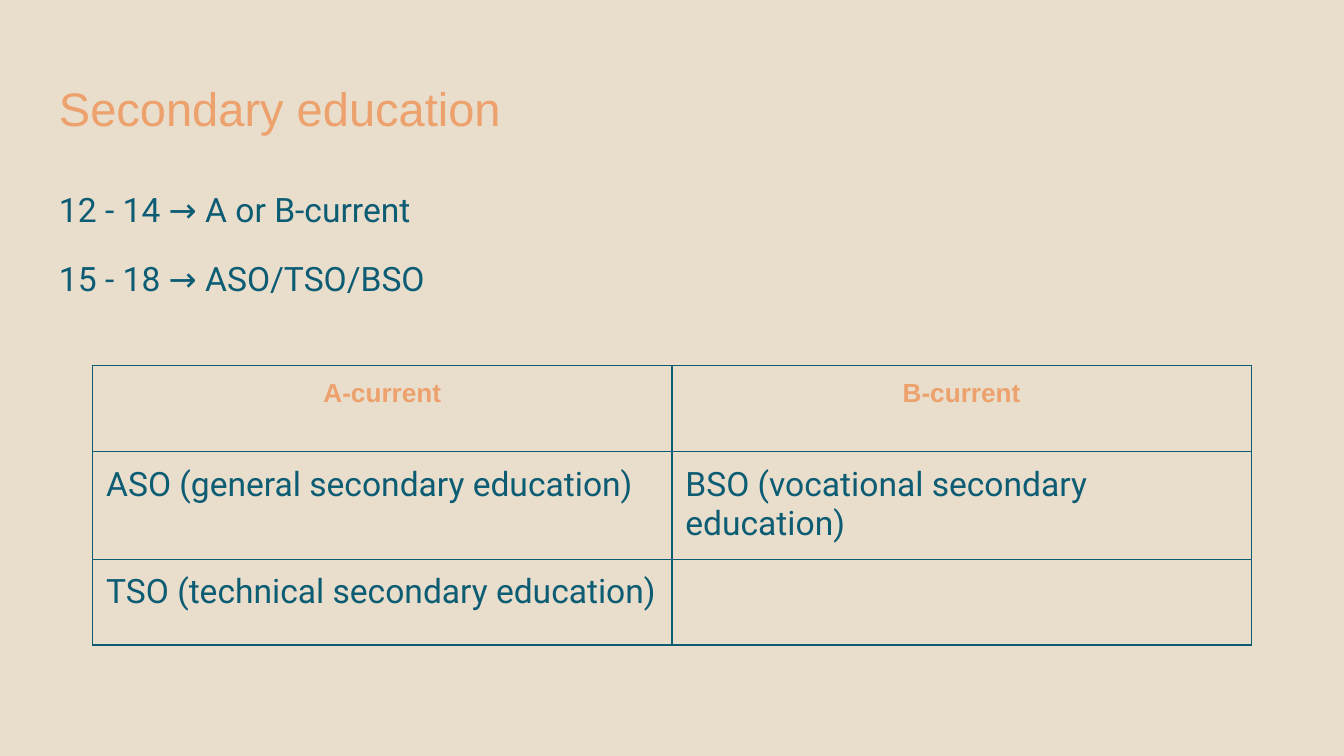
from dataclasses import dataclass

from lxml.etree import SubElement
from pptx import Presentation
from pptx.dml.color import RGBColor
from pptx.enum.text import MSO_ANCHOR, PP_ALIGN
from pptx.oxml.ns import qn
from pptx.util import Inches, Pt

SAND = RGBColor(0xE9, 0xDD, 0xCC)
ORANGE = RGBColor(0xED, 0xA1, 0x6C)
TEAL = RGBColor(0x0C, 0x5C, 0x74)
MARGIN = Inches(0.1)


@dataclass(frozen=True)
class TextStyle:
    font: str
    size: float
    color: RGBColor
    bold: bool = False
    align: PP_ALIGN = PP_ALIGN.LEFT


TITLE = TextStyle("Arial", 25.2, ORANGE)
BODY = TextStyle("Roboto", 18, TEAL)
HEADER = TextStyle("Arial", 14, ORANGE, True, PP_ALIGN.CENTER)

BODY_LINES = ["12 - 14 → A or B-current", "15 - 18 → ASO/TSO/BSO"]
TABLE_ROWS = [
    ["A-current", "B-current"],
    ["ASO (general secondary education)", "BSO (vocational secondary education)"],
    ["TSO (technical secondary education)", ""],
]


def write(para, text: str, style: TextStyle) -> None:
    para.alignment = style.align
    para.font.size = Pt(style.size)
    if not text:
        return
    span = para.add_run()
    span.text = text
    span.font.name = style.font
    span.font.size = Pt(style.size)
    span.font.bold = style.bold
    span.font.color.rgb = style.color


def add_text(page, top: float, height: float, lines: list[str],
             style: TextStyle, line_spacing: float = 1.0) -> None:
    box = page.shapes.add_textbox(Inches(0.34), Inches(top), Inches(9.32), Inches(height))
    frame = box.text_frame
    frame.word_wrap = True
    frame.vertical_anchor = MSO_ANCHOR.TOP
    frame.margin_left = frame.margin_right = MARGIN
    frame.margin_top = frame.margin_bottom = MARGIN
    for index, line in enumerate(lines):
        para = frame.add_paragraph() if index else frame.paragraphs[0]
        para.line_spacing = line_spacing
        if index:
            para.space_before = Pt(12)
        write(para, line, style)


def style_cell(cell) -> None:
    cell.margin_left = cell.margin_right = MARGIN
    cell.margin_top = cell.margin_bottom = MARGIN
    properties = cell._tc.get_or_add_tcPr()
    for side in ("a:lnL", "a:lnR", "a:lnT", "a:lnB"):
        line = SubElement(properties, qn(side), w=str(Pt(0.75)))
        fill = SubElement(line, qn("a:solidFill"))
        SubElement(fill, qn("a:srgbClr"), val=str(TEAL))
    cell.fill.background()


def add_school_table(page, rows: list[list[str]]) -> None:
    row_height, column_width = Inches(0.64), Inches(4.31)
    table = page.shapes.add_table(
        len(rows), len(rows[0]), Inches(0.69), Inches(2.72),
        column_width * len(rows[0]), row_height * len(rows)).table
    table.first_row = table.horz_banding = False
    for row_index, texts in enumerate(rows):
        for column_index, text in enumerate(texts):
            cell = table.cell(row_index, column_index)
            style_cell(cell)
            write(cell.text_frame.paragraphs[0], text, BODY if row_index else HEADER)


def main() -> None:
    deck = Presentation()
    # Widescreen page, 16:9
    deck.slide_width = Inches(10)
    deck.slide_height = Inches(10 * 9 / 16)
    page = deck.slides.add_slide(deck.slide_layouts[6])
    page.background.fill.solid()
    page.background.fill.fore_color.rgb = SAND

    # Heading and age groups
    add_text(page, 0.49, 0.63, ["Secondary education"], TITLE)
    add_text(page, 1.26, 3.74, BODY_LINES, BODY, 1.15)

    # School types by current
    add_school_table(page, TABLE_ROWS)
    deck.save("out.pptx")


if __name__ == "__main__":
    main()
